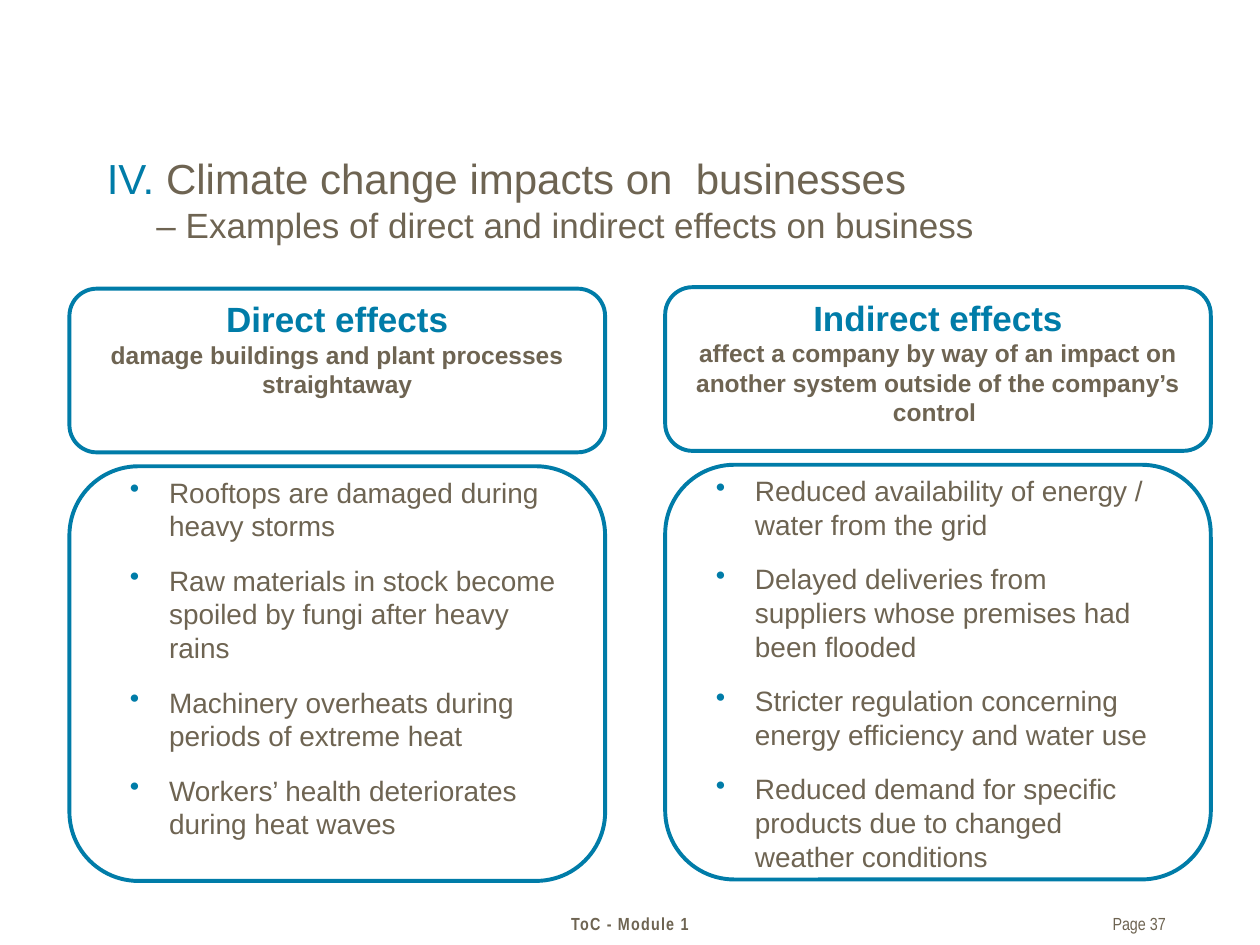
import pptx
import pptx.util
import pptx.dml.color
import pptx.enum.shapes
import pptx.enum.text
import pptx.oxml
import pptx.oxml.ns

COLOURS = {"blue": "007CA8", "brown": "6E6452"}
ALIGN = pptx.enum.text.PP_ALIGN
Cm = pptx.util.Cm
Pt = pptx.util.Pt


def colour(name):
    return pptx.dml.color.RGBColor.from_string(COLOURS[name])


def style(span, size, name="brown", bold=False, family="Arial"):
    span.font.size = Pt(size)
    span.font.name = family
    span.font.bold = bold
    span.font.color.rgb = colour(name)


def add_text(page, left, top, width, height, lines):
    box = page.shapes.add_textbox(Cm(left), Cm(top), Cm(width), Cm(height))
    box.text_frame.word_wrap = True
    box.text_frame.text = "\n".join(lines)
    return box


def set_indent(para, margin, hanging):
    properties = para._p.get_or_add_pPr()
    properties.set("marL", str(Cm(margin)))
    properties.set("indent", str(-Cm(hanging)))
    return properties


def add_bullet(para):
    properties = set_indent(para, 1.02, 0.79)
    bullet_colour = pptx.oxml.ns.qn("a:buClr")
    clr = properties.makeelement(bullet_colour, {})
    clr.append(clr.makeelement(pptx.oxml.ns.qn("a:srgbClr"), {"val": COLOURS["blue"]}))
    properties.append(clr)
    properties.append(properties.makeelement(pptx.oxml.ns.qn("a:buChar"), {"char": "•"}))


def add_title(page, left, top, width, height):
    title = page.shapes.title
    title.left, title.top, title.width, title.height = Cm(left), Cm(top), Cm(width), Cm(height)
    frame = title.text_frame
    frame.word_wrap = True
    frame.auto_size = pptx.enum.text.MSO_AUTO_SIZE.NONE
    frame.vertical_anchor = pptx.enum.text.MSO_ANCHOR.TOP
    para = frame.paragraphs[0]
    para.alignment = ALIGN.LEFT
    set_indent(para, 1, 1)
    para.text = "IV. "
    style(para.runs[0], 24, "blue")
    heading = para.add_run()
    heading.text = "Climate change impacts on  businesses "
    style(heading, 24)
    para.add_line_break()
    subtitle = para.add_run()
    subtitle.text = "– Examples of direct and indirect effects on business"
    style(subtitle, 20)


def add_frame(page, left, top, width, height):
    frame = page.shapes.add_shape(
        pptx.enum.shapes.MSO_SHAPE.ROUNDED_RECTANGLE, Cm(left), Cm(top), Cm(width), Cm(height))
    frame.shadow.inherit = False
    frame.fill.background()
    frame.line.color.rgb = colour("blue")
    frame.line.width = Pt(2.25)


def add_column(page, left, top, width, inset, heading, summary, examples):
    add_frame(page, left, top, width, 3.3)
    add_frame(page, left, top + 3.58, width, 8.36)

    header = add_text(page, left, top + 0.06, width, 2.9, [heading, summary])
    for para, size, name in zip(header.text_frame.paragraphs, (20, 14), ("blue", "brown")):
        para.alignment = ALIGN.CENTER
        style(para.runs[0], size, name, bold=True)

    listing = add_text(page, left + inset, top + 3.76, width - 1.81, 8, examples)
    frame = listing.text_frame
    frame.margin_left = frame.margin_right = frame.margin_top = frame.margin_bottom = 0
    for index, para in enumerate(frame.paragraphs):
        add_bullet(para)
        para.space_before = Pt(6 if index else 0)
        para.space_after = Pt(6)
        style(para.runs[0], 16)


def add_footer(page, top):
    module = add_text(page, 7.95, top, 9.5, 0.69, ["ToC - Module 1"])
    number = add_text(page, 20.93, top, 2.57, 0.69, ["Page 37"])
    number.text_frame.margin_right = 0
    for box, alignment, bold in ((module, ALIGN.CENTER, True), (number, ALIGN.RIGHT, False)):
        para = box.text_frame.paragraphs[0]
        para.alignment = alignment
        style(para.runs[0], 10, bold=bold, family="Arial Narrow")
    module.text_frame.paragraphs[0].runs[0]._r.get_or_add_rPr().set("spc", "70")


def main():
    deck = pptx.Presentation()
    deck.slide_width, deck.slide_height = Cm(25.4), Cm(19.05)
    page = deck.slides.add_slide(deck.slide_layouts[5])
    add_title(page, 1.9, 2.95, 21.6, 2.5)
    add_column(page, 1.4, 5.82, 10.8, 0.99, "Direct effects",
               "damage buildings and plant processes straightaway",
               ["Rooftops are damaged during heavy storms",
                "Raw materials in stock become spoiled by fungi after heavy rains",
                "Machinery overheats during periods of extreme heat",
                "Workers’ health deteriorates during heat waves"])
    add_column(page, 13.41, 5.79, 11, 0.79, "Indirect effects",
               "affect a company by way of an impact on another system "
               "outside of the company’s control ",
               ["Reduced availability of energy / water from the grid",
                "Delayed deliveries from suppliers whose premises had been flooded",
                "Stricter regulation concerning energy efficiency and water use",
                "Reduced demand for specific products due to changed weather conditions"])
    add_footer(page, 18.29)
    deck.save("out.pptx")


if __name__ == "__main__":
    main()
